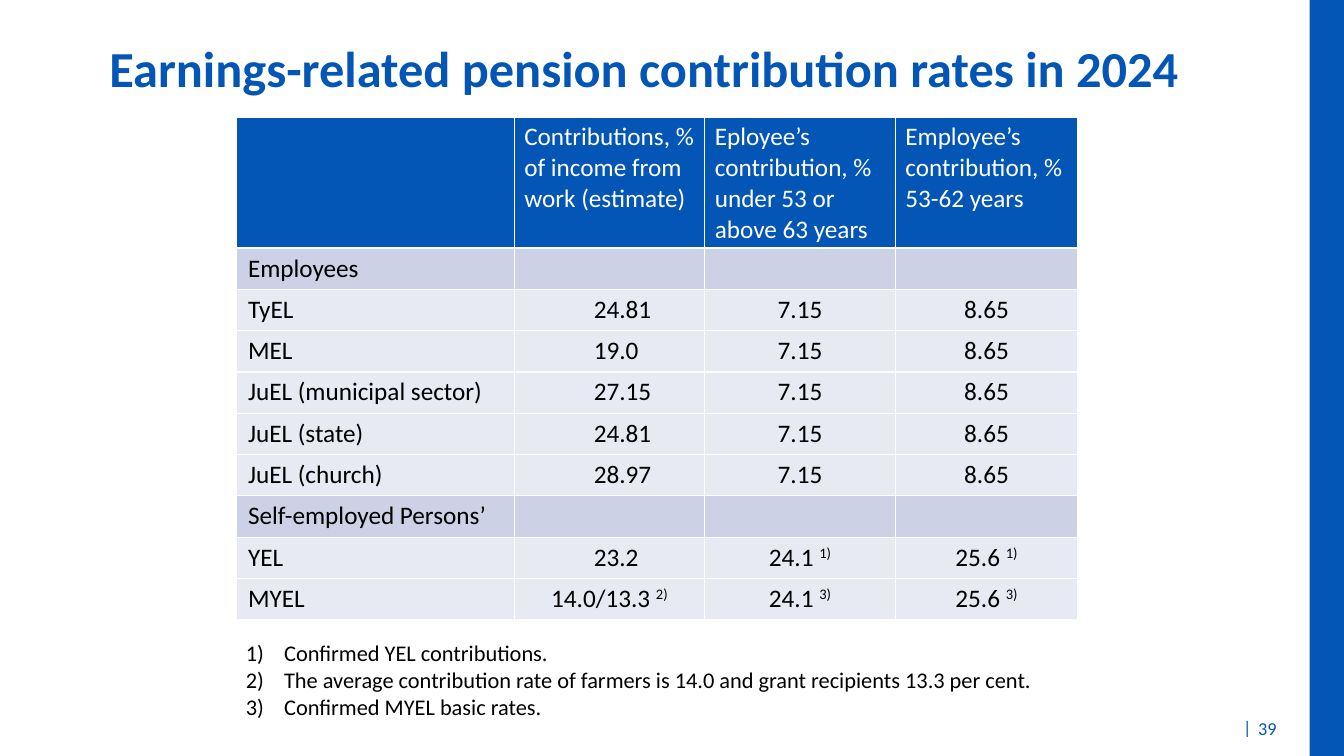
from lxml import etree
from pptx import Presentation
from pptx.dml.color import RGBColor
from pptx.enum.shapes import MSO_SHAPE
from pptx.enum.text import MSO_ANCHOR, PP_ALIGN
from pptx.oxml.ns import qn
from pptx.util import Inches, Pt

COLORS = {"blue": "0356B5", "white": "FFFFFF", "black": "000000",
          "group": "CCD1E5", "row": "E7E9F3"}


def add_span(para, text, size, color, bold=False):
    span = para.add_run()
    span.text = text
    formats = {"name": "Calibri", "size": Pt(size), "bold": bold}
    for name, value in formats.items():
        setattr(span.font, name, value)
    span.font.color.rgb = RGBColor.from_string(COLORS[color])
    return span


def add_box(page, left, top, width, height, wrap=True, anchor=MSO_ANCHOR.TOP):
    box = page.shapes.add_textbox(*map(Inches, (left, top, width, height)))
    box.text_frame.word_wrap = wrap
    box.text_frame.vertical_anchor = anchor
    return box.text_frame


deck = Presentation()
deck.slide_width, deck.slide_height = Inches(13.33), Inches(7.5)
page = deck.slides.add_slide(deck.slide_layouts[6])

# Side bar
bar = page.shapes.add_shape(MSO_SHAPE.RECTANGLE, Inches(12.99), 0, Inches(0.35), Inches(7.5))
bar.shadow.inherit = False
bar.fill.solid()
bar.fill.fore_color.rgb = RGBColor.from_string(COLORS["blue"])
bar.line.fill.background()

# Title and page number
title = add_box(page, 0.6, 0.26, 11.58, 0.81, anchor=MSO_ANCHOR.MIDDLE).paragraphs[0]
title.alignment = PP_ALIGN.CENTER
add_span(title, "Earnings-related pension contribution rates in 2024", 36, "blue", bold=True)
divider = add_box(page, 12.23, 7.06, 0.29, 0.35, wrap=False)
add_span(divider.paragraphs[0], "|", 13, "blue")
number = add_box(page, 12.38, 7.05, 0.44, 0.35, anchor=MSO_ANCHOR.MIDDLE)
add_span(number.paragraphs[0], "39", 13, "blue")

# Footnotes
footnotes = ["Confirmed YEL contributions.",
             "The average contribution rate of farmers is 14.0 and grant recipients 13.3 per cent.",
             "Confirmed MYEL basic rates."]
notes_frame = add_box(page, 2.34, 6.29, 8.66, 0.91)
for index, footnote in enumerate(footnotes):
    para = notes_frame.add_paragraph() if index else notes_frame.paragraphs[0]
    props = para._p.get_or_add_pPr()
    props.set("marL", str(Inches(0.38)))
    props.set("indent", str(-Inches(0.38)))
    etree.SubElement(props, qn("a:buFont"), typeface="+mj-lt")
    etree.SubElement(props, qn("a:buAutoNum"), type="arabicParenR")
    add_span(para, footnote, 16, "black")

# Contribution rates; a cell may be a (value, footnote mark) pair
rates = [
    ["", "Contributions, % of income from work (estimate)",
     "Eployee’s contribution, % under 53 or above 63 years",
     "Employee’s contribution, % 53-62 years"],
    ["Employees", "", "", ""],
    ["TyEL", "24.81", "7.15", "8.65"],
    ["MEL", "19.0", "7.15", "8.65"],
    ["JuEL (municipal sector)", "27.15", "7.15", "8.65"],
    ["JuEL (state)", "24.81", "7.15", "8.65"],
    ["JuEL (church)", "28.97", "7.15", "8.65"],
    ["Self-employed Persons’", "", "", ""],
    ["YEL", "23.2", ("24.1 ", "1)"), ("25.6 ", "1)")],
    ["MYEL", ("14.0/13.3 ", "2)"), ("24.1 ", "3)"), ("25.6 ", "3)")],
]
frame = page.shapes.add_table(len(rates), 4, Inches(2.34), Inches(1.16),
                              Inches(8.35), Inches(4.95))
table = frame.table
table.first_row = table.horz_banding = False
for column, width in zip(table.columns, (2.76, 1.89, 1.89, 1.81)):
    column.width = Inches(width)

for r, values in enumerate(rates):
    is_header, is_group = r == 0, r > 0 and not values[1]
    table.rows[r].height = Inches(1.3 if is_header else 0.41)
    fill = "blue" if is_header else "group" if is_group else "row"
    for c, value in enumerate(values):
        cell = table.cell(r, c)
        cell_props = cell._tc.get_or_add_tcPr()
        for side in ("lnL", "lnR", "lnT", "lnB"):
            border = etree.SubElement(cell_props, qn(f"a:{side}"), w=str(Pt(1)))
            solid = etree.SubElement(border, qn("a:solidFill"))
            etree.SubElement(solid, qn("a:srgbClr"), val=COLORS["white"])
        cell.fill.solid()
        cell.fill.fore_color.rgb = RGBColor.from_string(COLORS[fill])

        text, mark = value if isinstance(value, tuple) else (value, "")
        para = cell.text_frame.paragraphs[0]
        if not is_header:
            if c == 0:
                cell.margin_left = Inches(0.12)
            elif c == 1 and text and not mark:
                cell.margin_left, cell.margin_right = Inches(0.79), Inches(0.28)
            elif text:
                para.alignment = PP_ALIGN.CENTER
        color = "white" if is_header else "black"
        if text:
            add_span(para, text, 18, color)
        if mark:
            superscript = add_span(para, mark, 18, color)
            superscript._r.get_or_add_rPr().set("baseline", "30000")

deck.save("out.pptx")
